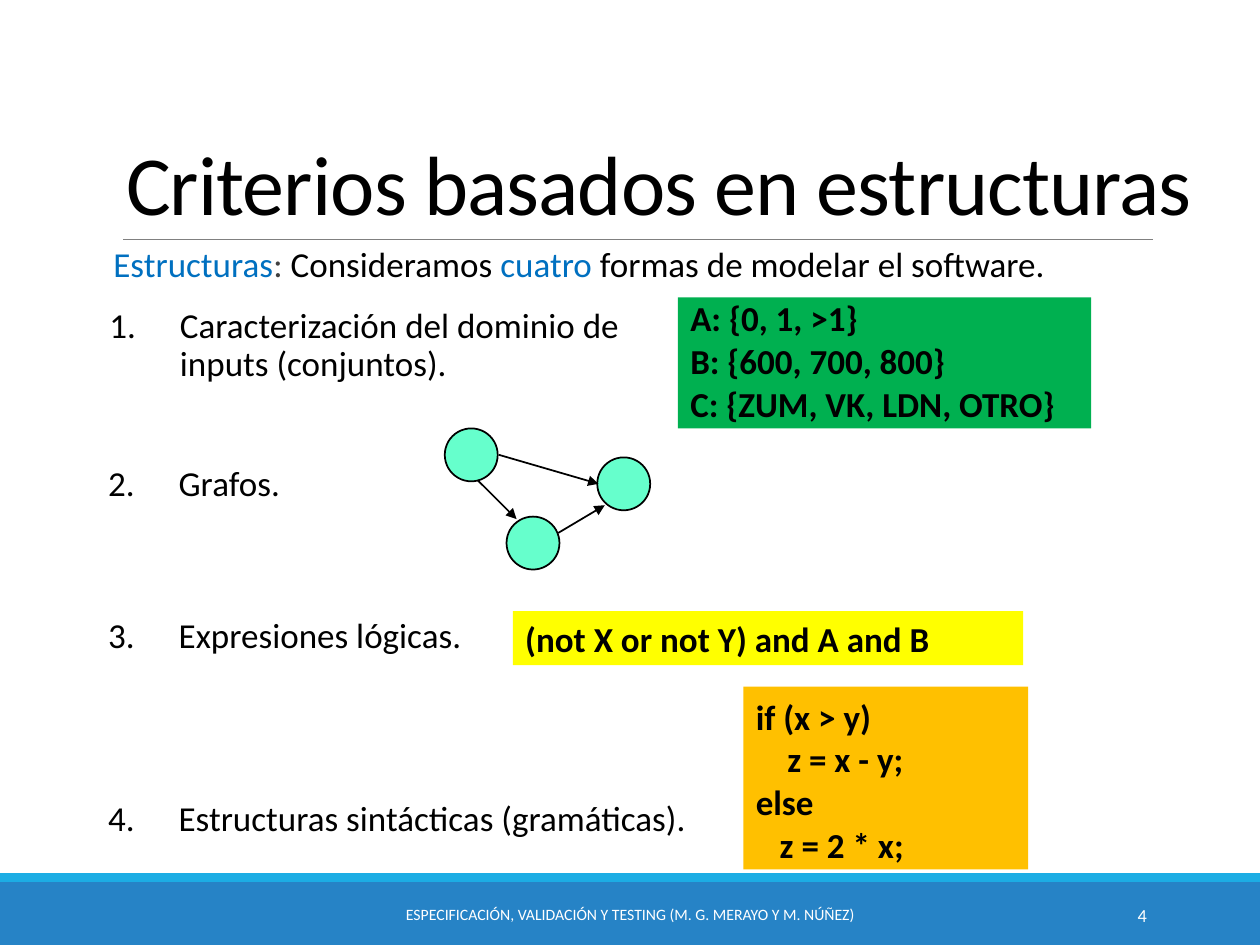
from lxml.etree import SubElement
from pptx import Presentation
from pptx.dml.color import RGBColor
from pptx.enum.shapes import MSO_CONNECTOR, MSO_SHAPE
from pptx.enum.text import MSO_ANCHOR, MSO_AUTO_SIZE, PP_ALIGN
from pptx.oxml.ns import qn
from pptx.util import Pt

PX = 9144  # EMU per px, 100 px to the inch
FONT = "Calibri"

BLACK = RGBColor(0x00, 0x00, 0x00)
WHITE = RGBColor(0xFF, 0xFF, 0xFF)
GRAY = RGBColor(0x80, 0x80, 0x80)
DARK_GRAY = RGBColor(0x40, 0x40, 0x40)
ACCENT = RGBColor(0x00, 0x70, 0xC0)
BAND_BLUE = RGBColor(0x26, 0x83, 0xC6)
STRIPE_BLUE = RGBColor(0x1C, 0xAD, 0xE4)
GREEN = RGBColor(0x00, 0xB0, 0x50)
YELLOW = RGBColor(0xFF, 0xFF, 0x00)
ORANGE = RGBColor(0xFF, 0xC0, 0x00)
MINT = RGBColor(0x66, 0xFF, 0xCC)

# Each criterion: text, then left, top, width, height
CRITERIA = [
    ("Caracterización del dominio de inputs (conjuntos).", (77, 202, 439, 146)),
    ("Grafos.", (76, 353, 439, 64)),
    ("Expresiones lógicas.", (76, 465, 439, 81)),
    ("Estructuras sintácticas (gramáticas).", (76, 593, 503, 116)),
]

# Each example line: text and indent
DOMAIN_LINES = [("A: {0, 1, >1}", 0), ("B: {600, 700, 800}", 0),
                ("C: {ZUM, VK, LDN, OTRO}", 0)]
LOGIC_LINES = [("(not X or not Y) and A and B", 0)]
CODE_LINES = [("if (x > y)", 0), ("z = x - y;", 25), ("else", 0), ("z = 2 * x;", 19)]

NODE_SIZE = 42
NODES = [(353, 340), (474, 363), (402, 410)]
EDGES = [(396, 361, 475, 384), (379, 381, 410, 412), (443, 423, 480, 401)]


def scale(*lengths):
    return [length * PX for length in lengths]


def add_run(para, text, size, color, bold=False):
    span = para.add_run()
    span.text = text
    span.font.name = FONT
    span.font.size = Pt(size)
    span.font.bold = bold
    span.font.color.rgb = color
    return span


def add_text_box(slide, place, anchor=MSO_ANCHOR.MIDDLE):
    frame = slide.shapes.add_textbox(*scale(*place)).text_frame
    frame.word_wrap = True
    frame.vertical_anchor = anchor
    return frame


def add_filled(shapes, kind, place, fill, line=None):
    shape = shapes.add_shape(kind, *scale(*place))
    shape.shadow.inherit = False
    shape.fill.solid()
    shape.fill.fore_color.rgb = fill
    if line is None:
        shape.line.fill.background()
    else:
        shape.line.color.rgb = line
        shape.line.width = Pt(1)
    return shape


def add_line(shapes, ends, color, width, arrow=False):
    line = shapes.add_connector(MSO_CONNECTOR.STRAIGHT, *scale(*ends))
    line.line.color.rgb = color
    line.line.width = Pt(width)
    properties = line._element.spPr
    if arrow:
        SubElement(properties.find(qn("a:ln")), qn("a:tailEnd"), type="triangle")
    SubElement(properties, qn("a:effectLst"))


def add_title(slide, text):
    title = slide.shapes.title
    title.left, title.top, title.width, title.height = scale(90, 31, 867, 159)
    frame = title.text_frame
    frame.auto_size = MSO_AUTO_SIZE.NONE
    frame.word_wrap = True
    frame.vertical_anchor = MSO_ANCHOR.BOTTOM
    para = frame.paragraphs[0]
    para.alignment = PP_ALIGN.LEFT
    para.line_spacing = 0.85
    span = add_run(para, text, 48, BLACK)
    span.font._element.set("spc", "-50")


def add_intro(slide):
    frame = add_text_box(slide, (90, 191, 825, 66), MSO_ANCHOR.TOP)
    frame.margin_left = frame.margin_right = 0
    para = frame.paragraphs[0]
    para.line_spacing = 0.9
    para.space_before, para.space_after = Pt(12), Pt(2)
    for text, color in [("Estructuras", ACCENT), (": ", DARK_GRAY),
                        ("Consideramos ", BLACK), ("cuatro ", ACCENT),
                        ("formas de modelar el software.", BLACK)]:
        add_run(para, text, 20, color)


def add_criterion(slide, number, text, place):
    para = add_text_box(slide, place).paragraphs[0]
    para.line_spacing = 0.9
    para.space_before = Pt(6)
    properties = para._p.get_or_add_pPr()
    properties.set("marL", str(56 * PX))
    properties.set("indent", str(-56 * PX))
    SubElement(properties, qn("a:buFont"), typeface=FONT)
    SubElement(properties, qn("a:buAutoNum"), type="arabicPeriod", startAt=str(number))
    add_run(para, text, 20, BLACK)


def add_example(slide, place, fill, lines, spacing, anchor):
    frame = add_filled(slide.shapes, MSO_SHAPE.RECTANGLE, place, fill).text_frame
    frame.word_wrap = True
    frame.vertical_anchor = anchor
    for index, (text, indent) in enumerate(lines):
        para = frame.add_paragraph() if index else frame.paragraphs[0]
        para.alignment = PP_ALIGN.LEFT
        para.line_spacing = spacing
        para.space_before = Pt(10)
        if indent:
            para._p.get_or_add_pPr().set("marL", str(indent * PX))
        add_run(para, text, 20, BLACK, bold=True)


def add_graph(slide):
    shapes = slide.shapes.add_group_shape().shapes
    for left, top in NODES:
        add_filled(shapes, MSO_SHAPE.OVAL, (left, top, NODE_SIZE, NODE_SIZE), MINT, BLACK)
    for ends in EDGES:
        add_line(shapes, ends, BLACK, 1, arrow=True)


def add_footer_text(slide, place, text, size, alignment):
    para = add_text_box(slide, place).paragraphs[0]
    para.alignment = alignment
    add_run(para, text, size, WHITE)


def main():
    deck = Presentation()
    deck.slide_width, deck.slide_height = scale(1000, 750)
    slide = deck.slides.add_slide(deck.slide_layouts[5])

    # Footer bands and title rule
    add_filled(slide.shapes, MSO_SHAPE.RECTANGLE, (0, 700, 1000, 50), BAND_BLUE)
    add_filled(slide.shapes, MSO_SHAPE.RECTANGLE, (0, 693, 1000, 7), STRIPE_BLUE)
    add_line(slide.shapes, (98, 190, 915, 190), GRAY, 0.5)

    # Heading
    add_title(slide, "Criterios basados en estructuras")
    add_intro(slide)

    # Numbered criteria and their examples
    for number, (text, place) in enumerate(CRITERIA, start=1):
        add_criterion(slide, number, text, place)
    add_example(slide, (538, 236, 328, 104), GREEN, DOMAIN_LINES, 0.6, MSO_ANCHOR.BOTTOM)
    add_graph(slide)
    add_example(slide, (407, 485, 405, 43), YELLOW, LOGIC_LINES, 1.0, MSO_ANCHOR.TOP)
    add_example(slide, (590, 545, 226, 145), ORANGE, CODE_LINES, 0.6, MSO_ANCHOR.BOTTOM)

    # Footer
    add_footer_text(slide, (302, 706, 396, 40),
                    "ESPECIFICACIÓN, VALIDACIÓN Y TESTING (M. G. MERAYO Y M. NÚÑEZ)",
                    9, PP_ALIGN.CENTER)
    add_footer_text(slide, (812, 706, 108, 40), "4", 10.5, PP_ALIGN.RIGHT)

    deck.save("out.pptx")


if __name__ == "__main__":
    main()
